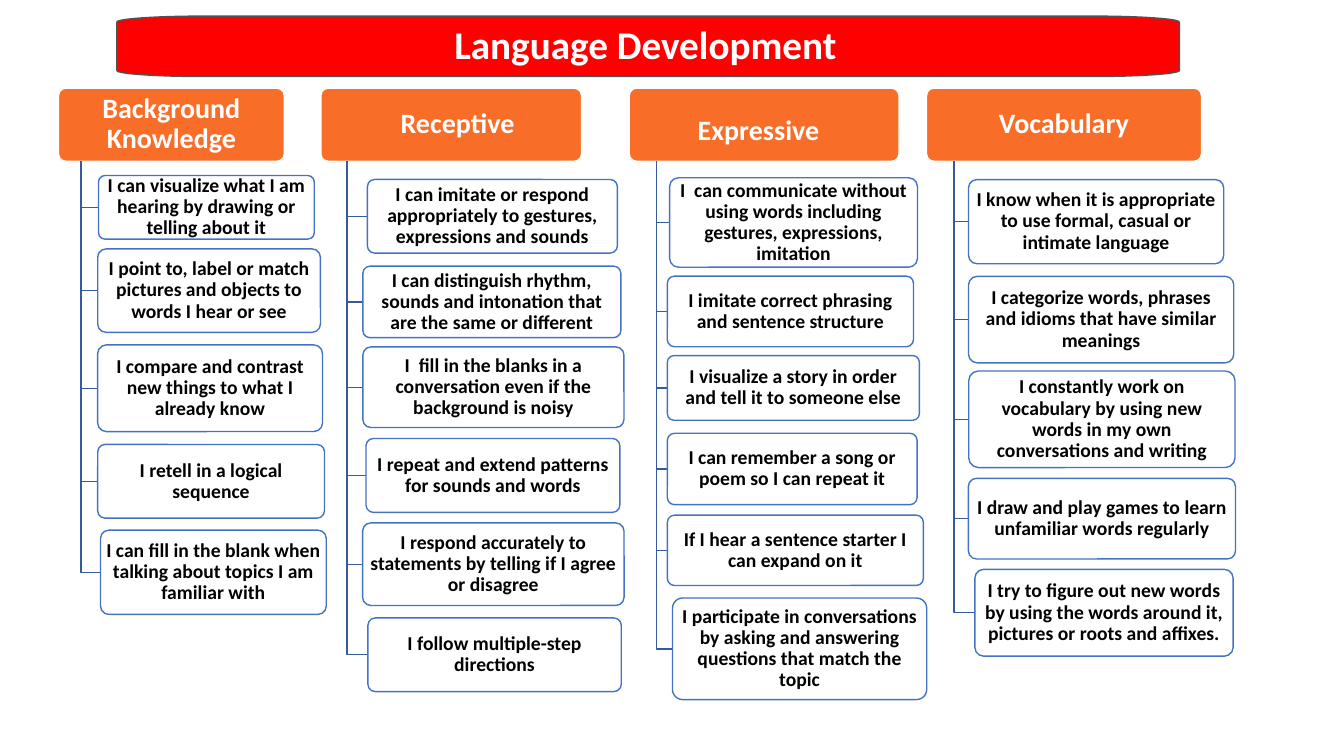
from math import cos, pi, sin

from pptx import Presentation
from pptx.dml.color import RGBColor
from pptx.enum.shapes import MSO_SHAPE
from pptx.enum.text import MSO_ANCHOR, PP_ALIGN
from pptx.oxml.ns import qn
from pptx.util import Pt

# Content: every skill is (text, left, top, width, height), in points
TITLE = "Language Development"
COLUMNS = [
    {"heading": "Background Knowledge", "left": 41.8, "width": 161.3, "nudge": (0, 0), "skills": [
        ("I can visualize what I am hearing by drawing or telling about it", 70.4, 125.4, 154.1, 45.4),
        ("I point to, label or match pictures and objects to words I hear or see", 69.8, 177.8, 159.1, 59.6),
        ("I compare and contrast new things to what I already know", 69.8, 246.4, 160.6, 61.9),
        ("I retell in a logical sequence", 69.8, 317.5, 162, 52.6),
        ("I can fill in the blank when talking about topics I am familiar with", 71.8, 378.7, 161.3, 60.2),
    ]},
    {"heading": "Receptive", "left": 229.2, "width": 186.2, "nudge": (9, 0), "skills": [
        ("I can imitate or respond appropriately to gestures, expressions and sounds", 262.4, 128.2, 178.6, 52.6),
        ("I can distinguish rhythm, sounds and intonation that are the same or different", 259.2, 190.1, 184.3, 51.1),
        ("I  fill in the blanks in a conversation even if the background is noisy", 259.2, 247.8, 186.5, 57.6),
        ("I repeat and extend patterns for sounds and words", 261.4, 313.2, 181.4, 52.8),
        ("I respond accurately to statements by telling if I agree or disagree", 259, 373.5, 186.8, 59),
        ("I follow multiple-step directions", 262.8, 441.4, 181, 52.6),
    ]},
    {"heading": "Expressive", "left": 449.5, "width": 192.7, "nudge": (-8, 10), "skills": [
        ("I  can communicate without using words including gestures, expressions, imitation", 478.3, 127, 177.1, 63.9),
        ("I imitate correct phrasing and sentence structure", 476.7, 197.3, 175.8, 50.4),
        ("I visualize a story in order and tell it to someone else", 476.7, 254, 180, 46.2),
        ("I can remember a song or poem so I can repeat it", 476.7, 309.5, 178.4, 51),
        ("If I hear a sentence starter I can expand on it", 476.7, 368, 182.9, 50.2),
        ("I participate in conversations by asking and answering questions that match the topic", 480.4, 427.2, 181.6, 72.5),
    ]},
    {"heading": "Vocabulary", "left": 661.8, "width": 196.4, "nudge": (0, 0), "skills": [
        ("I know when it is appropriate to use formal, casual or intimate language", 691.8, 128.3, 182.3, 60.1),
        ("I categorize words, phrases and idioms that have similar meanings", 691.8, 197.4, 189.5, 61.8),
        ("I constantly work on vocabulary by using new words in my own conversations and writing", 692, 265, 190.2, 69),
        ("I draw and play games to learn unfamiliar words regularly", 691.7, 341.7, 190.8, 57.6),
        ("I try to figure out new words by using the words around it, pictures or roots and affixes.", 696.4, 406.7, 184.4, 62),
    ]},
]

# Layout and colours
HEADING_TOP, HEADING_HEIGHT = 63, 52.2
BANNER = (83.5, 11.5, 758.9, 43.2)
BANNER_CORNER = (63.3, 4.3)
CORNER_STEPS = 12
RED, ORANGE, WHITE, BLACK = "FF0000", "F86D28", "FFFFFF", "000000"
BOX_LINE, BRANCH_LINE, BANNER_LINE = "4472C4", "365B9D", "525252"


def colour(hex_code):
    return RGBColor.from_string(hex_code)


def paint(shape, fill, line):
    shape.shadow.inherit = False
    if fill is None:
        shape.fill.background()
    else:
        shape.fill.solid()
        shape.fill.fore_color.rgb = colour(fill)
    shape.line.color.rgb = colour(line)
    shape.line.width = Pt(1)


def write(shape, text, size=14, ink=BLACK, margins=(2.1, 1.4, 2.1, 1.4)):
    frame = shape.text_frame
    frame.word_wrap = True
    frame.vertical_anchor = MSO_ANCHOR.MIDDLE
    (frame.margin_left, frame.margin_top,
     frame.margin_right, frame.margin_bottom) = map(Pt, margins)
    paragraph = frame.paragraphs[0]
    paragraph.alignment = PP_ALIGN.CENTER
    paragraph.line_spacing = 0.9
    run = paragraph.add_run()
    run.text = text
    run.font.name = "Calibri"
    run.font.size = Pt(size)
    run.font.bold = True
    run.font.color.rgb = colour(ink)


def rounded_box(left, top, width, height, fill, line):
    box = shapes.add_shape(MSO_SHAPE.ROUNDED_RECTANGLE,
                           Pt(left), Pt(top), Pt(width), Pt(height))
    box.adjustments[0] = 0.1
    paint(box, fill, line)
    return box


def outline(points, fill, line, close):
    start, *rest = [(Pt(x), Pt(y)) for x, y in points]
    builder = shapes.build_freeform(*start)
    builder.add_line_segments(rest, close=close)
    shape = builder.convert_to_shape()
    paint(shape, fill, line)
    return shape


def banner_points():
    """Rectangle with elliptical corners, clockwise from the left side."""
    left, top, width, height = BANNER
    rx, ry = BANNER_CORNER
    x1, x2 = left + rx, left + width - rx
    y1, y2 = top + ry, top + height - ry
    centres = [(x1, y1), (x2, y1), (x2, y2), (x1, y2)]
    points = []
    for quarter, (cx, cy) in enumerate(centres):
        for step in range(CORNER_STEPS + 1):
            angle = pi + (quarter + step / CORNER_STEPS) * pi / 2
            points.append((cx + rx * cos(angle), cy + ry * sin(angle)))
    return points


presentation = Presentation()
presentation.slide_width, presentation.slide_height = Pt(960), Pt(540)
shapes = presentation.slides.add_slide(presentation.slide_layouts[6]).shapes

# Columns: a heading, then a branch and a box for every skill
for column in COLUMNS:
    heading = rounded_box(column["left"], HEADING_TOP, column["width"],
                          HEADING_HEIGHT, ORANGE, WHITE)
    right, down = column["nudge"]
    write(heading, column["heading"], size=20, ink=WHITE,
          margins=(3 + max(right, 0), 2 + down, 3 + max(-right, 0), 2))
    trunk = column["left"] + column["width"] / 10
    for skill, left, top, width, height in column["skills"]:
        middle = top + height / 2
        outline([(trunk, HEADING_TOP + HEADING_HEIGHT), (trunk, middle), (left, middle)],
                None, BRANCH_LINE, close=False)
        box = rounded_box(left, top, width, height, WHITE, BOX_LINE)
        tint = box.fill._xPr.find(qn("a:solidFill"))[0]
        tint.makeelement(qn("a:alpha"), {"val": "90000"})
        tint.append(tint.makeelement(qn("a:alpha"), {"val": "90000"}))
        write(box, skill)

# Title banner
banner = outline(banner_points(), RED, BANNER_LINE, close=True)
write(banner, TITLE, size=28, ink=WHITE, margins=(3.6, 3.6, 7.6, 3.6))

presentation.save("out.pptx")
